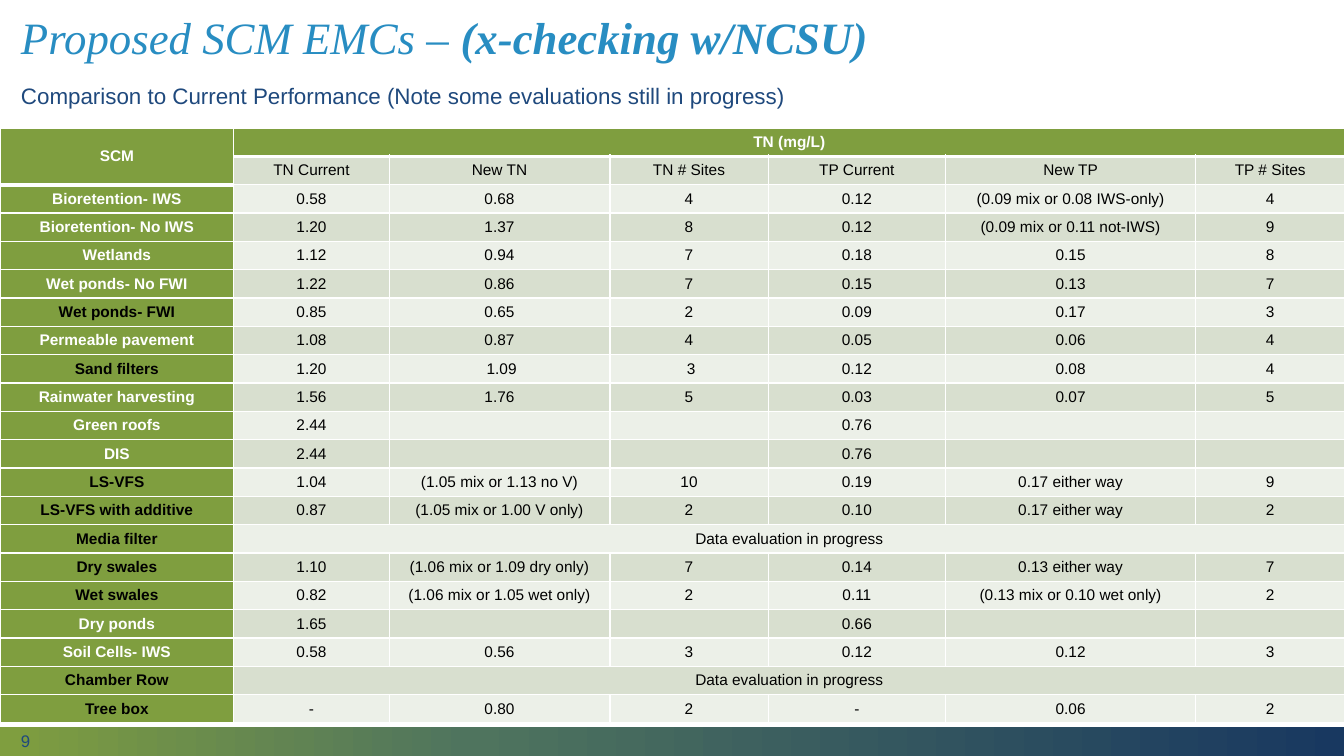
from copy import deepcopy

from lxml import etree
from pptx import Presentation
from pptx.dml.color import RGBColor
from pptx.enum.shapes import MSO_SHAPE
from pptx.enum.text import MSO_ANCHOR, PP_ALIGN
from pptx.oxml.ns import qn
from pptx.util import Inches, Pt

RECTANGLE = MSO_SHAPE.RECTANGLE
MIDDLE = MSO_ANCHOR.MIDDLE
CENTER = PP_ALIGN.CENTER

WHITE = RGBColor(0xFF, 0xFF, 0xFF)
BLACK = RGBColor(0x00, 0x00, 0x00)
GREEN = RGBColor(0x7F, 0x9E, 0x3F)
TEAL = RGBColor(0x4F, 0x74, 0x5E)
DARK_BLUE = RGBColor(0x18, 0x38, 0x60)
TITLE_BLUE = RGBColor(0x28, 0x8D, 0xC2)
TEXT_BLUE = RGBColor(0x1F, 0x49, 0x7D)
BAND_DARK = RGBColor(0xD8, 0xDF, 0xCF)
BAND_LIGHT = RGBColor(0xEC, 0xF0, 0xE8)

SANS = "Arial"
SERIF = "Times New Roman"
TABLE_TEXT_SIZE = Pt(11)

FOOTER_STOPS = [(0, GREEN), (0.35, TEAL), (1, DARK_BLUE)]
COLUMN_WIDTHS = [2.32, 1.54, 2.19, 1.57, 1.76, 2.48, 1.48]
PENDING = "Data evaluation in progress"
ROWS = [
    ["SCM", "TN (mg/L)"],
    ["", "TN Current", "New TN", "TN # Sites", "TP Current", "New TP", "TP # Sites"],
    ["Bioretention- IWS", "0.58", "0.68", "4", "0.12", "(0.09 mix or 0.08 IWS-only)", "4"],
    ["Bioretention- No IWS", "1.20", "1.37", "8", "0.12", "(0.09 mix or 0.11 not-IWS)", "9"],
    ["Wetlands", "1.12", "0.94", "7", "0.18", "0.15", "8"],
    ["Wet ponds- No FWI", "1.22", "0.86", "7", "0.15", "0.13", "7"],
    ["Wet ponds- FWI", "0.85", "0.65", "2", "0.09", "0.17", "3"],
    ["Permeable pavement", "1.08", "0.87", "4", "0.05", "0.06", "4"],
    ["Sand filters", "1.20", " 1.09", " 3", "0.12", "0.08", "4"],
    ["Rainwater harvesting", "1.56", "1.76", "5", "0.03", "0.07", "5"],
    ["Green roofs", "2.44", "", "", "0.76", "", ""],
    ["DIS", "2.44", "", "", "0.76", "", ""],
    ["LS-VFS", "1.04", "(1.05 mix or 1.13 no V)", "10", "0.19", "0.17 either way", "9"],
    ["LS-VFS with additive", "0.87", "(1.05 mix or 1.00 V only)", "2", "0.10", "0.17 either way", "2"],
    ["Media filter", PENDING],
    ["Dry swales", "1.10", "(1.06 mix or 1.09 dry only)", "7", "0.14", "0.13 either way", "7"],
    ["Wet swales", "0.82", "(1.06 mix or 1.05 wet only)", "2", "0.11", "(0.13 mix or 0.10 wet only)", "2"],
    ["Dry ponds", "1.65", "", "", "0.66", "", ""],
    ["Soil Cells- IWS", "0.58", "0.56", "3", "0.12", "0.12", "3"],
    ["Chamber Row", PENDING],
    ["Tree box", "-", "0.80", "2", "-", "0.06", "2"],
]
BLACK_LABELS = {
    "Wet ponds- FWI", "Sand filters", "LS-VFS", "LS-VFS with additive", "Media filter",
    "Dry swales", "Wet swales", "Chamber Row", "Tree box",
}


def set_font(font, name, size, color, bold=False, italic=False):
    font.name = name
    font.size = size
    font.color.rgb = color
    font.bold = bold
    font.italic = italic


def add_footer_bar(slide):
    bar = slide.shapes.add_shape(RECTANGLE, 0, Inches(7.21), Inches(13.33), Inches(0.3))
    bar.shadow.inherit = False
    bar.line.fill.background()
    bar.fill.gradient()
    bar.fill.gradient_angle = 0
    stop_list = bar._element.spPr.find(".//" + qn("a:gsLst"))
    stop_list.append(deepcopy(stop_list[0]))
    for stop, (position, color) in zip(bar.fill.gradient_stops, FOOTER_STOPS):
        stop.position = position
        stop.color.rgb = color


def add_text_line(slide, left, top, width, height, runs):
    """Add a vertically centred box with one paragraph and return the paragraph."""
    box = slide.shapes.add_textbox(Inches(left), Inches(top), Inches(width), Inches(height))
    frame = box.text_frame
    frame.word_wrap = True
    frame.vertical_anchor = MIDDLE
    paragraph = frame.paragraphs[0]
    for text in runs:
        paragraph.add_run().text = text
    return paragraph


def add_title(slide):
    title = add_text_line(slide, 0.11, 0.09, 11.09, 0.61,
                          ["Proposed SCM EMCs – ", "(x-checking w/NCSU)"])
    title.line_spacing = 0.9
    for run, bold in zip(title.runs, (False, True)):
        set_font(run.font, SERIF, Pt(32), TITLE_BLUE, bold, italic=True)


def set_borders(cell, bottom_width):
    """Draw white borders; call before the fill, which must follow them in the XML."""
    properties = cell._tc.get_or_add_tcPr()
    for side, width in (("L", 1), ("R", 1), ("T", 1), ("B", bottom_width)):
        line = etree.SubElement(properties, qn(f"a:ln{side}"), w=str(Pt(width)))
        solid = etree.SubElement(line, qn("a:solidFill"))
        etree.SubElement(solid, qn("a:srgbClr"), val=str(WHITE))


def style_cell(cell, text, fill, color, bold, bottom_width):
    set_borders(cell, bottom_width)
    cell.fill.solid()
    cell.fill.fore_color.rgb = fill
    cell.vertical_anchor = MIDDLE
    cell.margin_left = cell.margin_right = Inches(0.07)
    cell.margin_top = cell.margin_bottom = 0
    paragraph = cell.text_frame.paragraphs[0]
    paragraph.alignment = CENTER
    if text:
        paragraph.add_run().text = text
    else:
        # An empty cell takes its line height from the end-of-paragraph size.
        paragraph._p.get_or_add_endParaRPr().set("sz", str(TABLE_TEXT_SIZE.centipoints))
    set_font(paragraph.font, SANS, TABLE_TEXT_SIZE, color, bold)


def add_emc_table(slide):
    column_count = len(COLUMN_WIDTHS)
    table = slide.shapes.add_table(len(ROWS), column_count, 0, Inches(1.27),
                                   Inches(13.33), Inches(5.91)).table
    for column, width in zip(table.columns, COLUMN_WIDTHS):
        column.width = Inches(width)
    for r, values in enumerate(ROWS):
        band = BAND_DARK if r % 2 else BAND_LIGHT
        for c in range(column_count):
            text = values[c] if c < len(values) else ""
            heading = r == 0 or c == 0
            color = WHITE if heading and text not in BLACK_LABELS else BLACK
            thick = r == 0 or (r == 1 and c == 0)
            style_cell(table.cell(r, c), text, GREEN if heading else band,
                       color, heading, 3 if thick else 1)
        if len(values) == 2:
            table.cell(r, 1).merge(table.cell(r, column_count - 1))
    table.cell(0, 0).merge(table.cell(1, 0))


def main():
    prs = Presentation()
    prs.slide_width = Inches(13.33)
    prs.slide_height = Inches(7.5)
    slide = prs.slides.add_slide(prs.slide_layouts[6])

    add_footer_bar(slide)
    add_title(slide)
    add_emc_table(slide)
    page_number = add_text_line(slide, 0.11, 7.27, 3, 0.15, ["9"])
    set_font(page_number.font, SANS, Pt(12), TEXT_BLUE)
    subtitle = add_text_line(
        slide, 0.11, 0.65, 9.49, 0.62,
        ["Comparison to Current Performance (Note some evaluations still in progress)"])
    subtitle.line_spacing = 0.9
    set_font(subtitle.font, SANS, Pt(16), TEXT_BLUE)

    prs.save("out.pptx")


if __name__ == "__main__":
    main()
